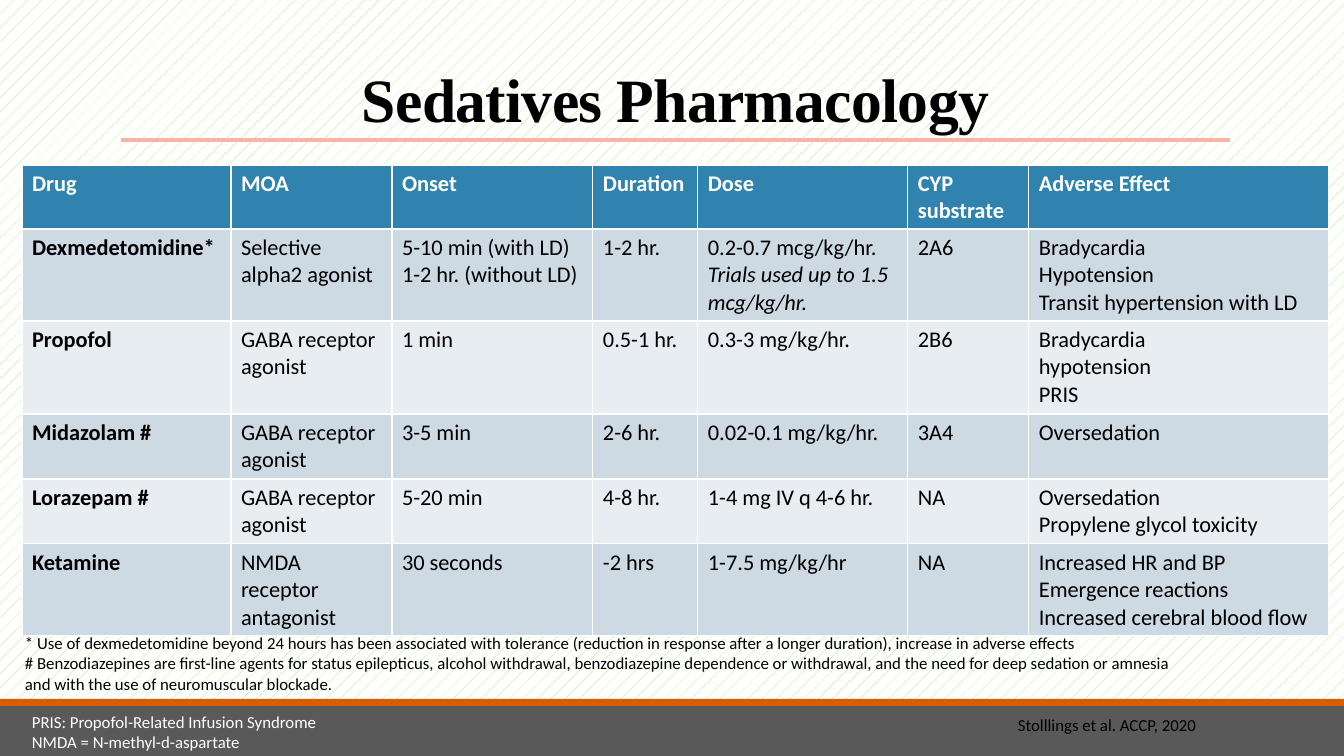
import pptx
import pptx.dml.color
import pptx.enum.dml
import pptx.enum.shapes
import pptx.enum.text
import pptx.oxml.ns
import pptx.util
import lxml.etree

SCALE = 12192000 / 1344  # EMU per px

THEME = {
    "white": "FFFFFF", "black": "000000", "hatch": "A7EA52",
    "footer": "595959", "stripe": "D85C00", "rule": "F9B3A7",
    "header": "3083AF", "bands": ["CDD9E3", "E8EDF2"],
    "title_font": "Times New Roman", "body_font": "Calibri",
    "title_size": 44, "table_size": 16, "note_size": 12,
}


def px(length):
    return pptx.util.Emu(round(length * SCALE))


def write(text_frame, lines, name, size, color, bold=False):
    text_frame.word_wrap = True
    for index, line in enumerate(lines):
        paragraph = text_frame.paragraphs[0] if index == 0 else text_frame.add_paragraph()
        paragraph.add_run().text = line
        paragraph.font.name = name
        paragraph.font.size = pptx.util.Pt(size)
        paragraph.font.bold = bold
        paragraph.font.color.rgb = pptx.dml.color.RGBColor.from_string(color)


presentation = pptx.Presentation()
presentation.slide_width = px(1344)
presentation.slide_height = px(756)
slide = presentation.slides.add_slide(presentation.slide_layouts[6])

# Hatched background
background = slide.background.fill
background.patterned()
background.pattern = pptx.enum.dml.MSO_PATTERN.PERCENT_5
background.fore_color.rgb = pptx.dml.color.RGBColor.from_string(THEME["hatch"])
background.back_color.rgb = pptx.dml.color.RGBColor.from_string(THEME["white"])

# Footer band and stripe
for top, height, color in [(706, 50, THEME["footer"]), (699, 7, THEME["stripe"])]:
    band = slide.shapes.add_shape(
        pptx.enum.shapes.MSO_SHAPE.RECTANGLE, 0, px(top), px(1344), px(height))
    band.shadow.inherit = False
    band.fill.solid()
    band.fill.fore_color.rgb = pptx.dml.color.RGBColor.from_string(color)
    band.line.fill.background()

# Title and the rule under it
rule = slide.shapes.add_connector(
    pptx.enum.shapes.MSO_CONNECTOR.STRAIGHT, px(121), px(140), px(1230), px(140))
rule.line.color.rgb = pptx.dml.color.RGBColor.from_string(THEME["rule"])
rule.line.width = pptx.util.Pt(2.25)
lxml.etree.SubElement(rule._element.spPr, pptx.oxml.ns.qn("a:effectLst"))

title = slide.shapes.add_textbox(px(121), px(31), px(1109), px(109)).text_frame
write(title, ["Sedatives Pharmacology"], THEME["title_font"],
      THEME["title_size"], THEME["black"], bold=True)
title.vertical_anchor = pptx.enum.text.MSO_ANCHOR.BOTTOM
title.paragraphs[0].alignment = pptx.enum.text.PP_ALIGN.CENTER
title.paragraphs[0].line_spacing = 0.85
title.paragraphs[0].runs[0]._r.get_or_add_rPr().set("spc", "-50")

# Drug table: a newline starts a new paragraph in the cell
rows = [
    ["Drug", "MOA", "Onset", "Duration", "Dose", "CYP substrate", "Adverse Effect"],
    ["Dexmedetomidine*", "Selective alpha2 agonist",
     "5-10 min (with LD)\n1-2 hr. (without LD)", "1-2 hr.",
     "0.2-0.7 mcg/kg/hr.\nTrials used up to 1.5 mcg/kg/hr.", "2A6",
     "Bradycardia\nHypotension\nTransit hypertension with LD"],
    ["Propofol", "GABA receptor agonist", "1 min", "0.5-1 hr.", "0.3-3 mg/kg/hr.",
     "2B6", "Bradycardia\nhypotension\nPRIS"],
    ["Midazolam #", "GABA receptor agonist", "3-5 min", "2-6 hr.",
     "0.02-0.1 mg/kg/hr.", "3A4", "Oversedation"],
    ["Lorazepam #", "GABA receptor agonist", "5-20 min", "4-8 hr.",
     "1-4 mg IV q 4-6 hr.", "NA", "Oversedation\nPropylene glycol toxicity"],
    ["Ketamine", "NMDA receptor antagonist", "30 seconds", "-2 hrs",
     "1-7.5 mg/kg/hr", "NA",
     "Increased HR and BP\nEmergence reactions\nIncreased cerebral blood flow"],
]
column_widths = [209, 161, 201, 105, 210, 121, 300]
row_heights = [64, 92, 93, 65, 65, 92]
table = slide.shapes.add_table(
    len(rows), len(column_widths), px(22), px(165),
    px(sum(column_widths)), px(sum(row_heights))).table
for column, width in zip(table.columns, column_widths):
    column.width = px(width)
for row, height in zip(table.rows, row_heights):
    row.height = px(height)
for row_index, row in enumerate(rows):
    is_header = row_index == 0
    fill = THEME["header"] if is_header else THEME["bands"][(row_index - 1) % 2]
    for column_index, text in enumerate(row):
        cell = table.cell(row_index, column_index)
        cell.fill.solid()
        cell.fill.fore_color.rgb = pptx.dml.color.RGBColor.from_string(fill)
        write(cell.text_frame, text.split("\n"), THEME["body_font"], THEME["table_size"],
              THEME["white"] if is_header else THEME["black"],
              bold=is_header or column_index == 0)
table.cell(1, 4).text_frame.paragraphs[1].font.italic = True

# Abbreviations, footnotes and source
notes = [
    (22, 707, 672, 50, THEME["white"],
     ["PRIS: Propofol-Related Infusion Syndrome", "NMDA = N-methyl-d-aspartate"]),
    (15, 628, 1169, 70, THEME["black"],
     ["* Use of dexmedetomidine beyond 24 hours has been associated with tolerance "
      "(reduction in response after a longer duration), increase in adverse effects",
      "# Benzodiazepines are first-line agents for status epilepticus, alcohol withdrawal, "
      "benzodiazepine dependence or withdrawal, and the need for deep sedation or amnesia "
      "and with the use of neuromuscular blockade."]),
    (1008, 710, 336, 30, THEME["black"], ["Stolllings et al. ACCP, 2020"]),
]
for left, top, width, height, color, lines in notes:
    note = slide.shapes.add_textbox(px(left), px(top), px(width), px(height))
    write(note.text_frame, lines, THEME["body_font"], THEME["note_size"], color)

presentation.save("out.pptx")
